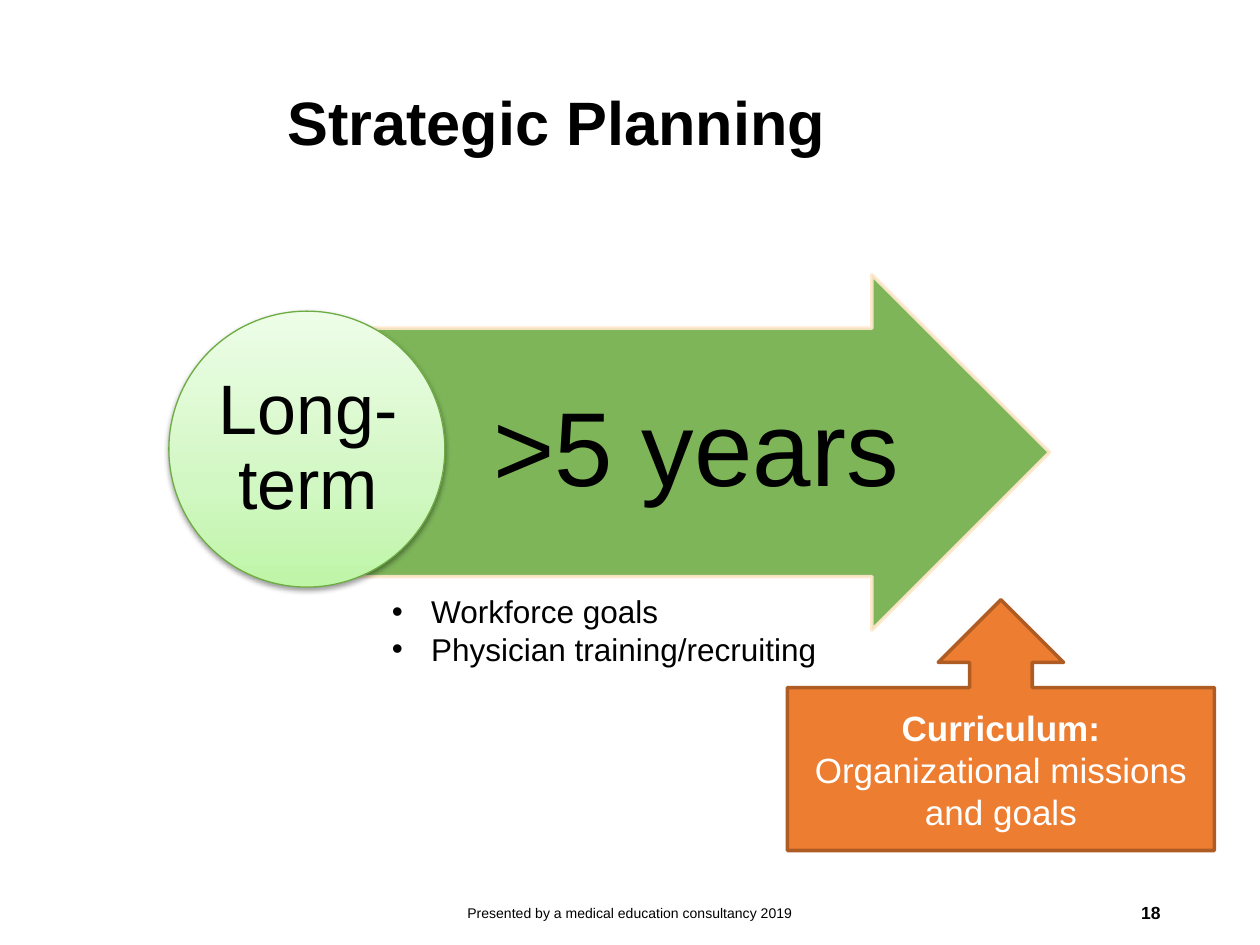
from dataclasses import dataclass

from lxml.etree import SubElement
from pptx import Presentation
from pptx.dml.color import RGBColor
from pptx.enum.shapes import MSO_SHAPE as Shape
from pptx.enum.text import MSO_ANCHOR as Anchor, MSO_AUTO_SIZE as AutoSize, PP_ALIGN as Align
from pptx.oxml import parse_xml
from pptx.oxml.ns import nsdecls, qn
from pptx.util import Pt


@dataclass(frozen=True)
class Theme:
    font: str = "Arial"
    ink: str = "000000"
    white: str = "FFFFFF"
    arrow: str = "70AD47"
    arrow_edge: str = "FFE8CC"
    circle_edge: str = "6DAC43"
    circle_stops: tuple = ((0, "BEF5A7"), (35, "D1F7C2"), (100, "EDFDE7"))
    callout: str = "ED7D31"
    callout_edge: str = "AF5C24"
    title: int = 35
    years: int = 60
    term: int = 40
    callout_text: int = 20
    body: int = 18
    number: int = 10
    footer: int = 8


THEME = Theme()


def color(value):
    return RGBColor.from_string(value)


def place(shape, left, top, width, height):
    shape.left, shape.top = Pt(left), Pt(top)
    shape.width, shape.height = Pt(width), Pt(height)


def write(shape, *lines, size, ink=THEME.ink, bold=(), align=Align.LEFT, anchor=Anchor.MIDDLE,
          spacing=1.0, margins=(7.2, 3.6, 7.2, 3.6), bullet=None, auto_size=AutoSize.NONE):
    frame = shape.text_frame
    frame.word_wrap = True
    frame.auto_size = auto_size
    frame.vertical_anchor = anchor
    frame.margin_left, frame.margin_top, frame.margin_right, frame.margin_bottom = map(Pt, margins)
    for index, line in enumerate(lines):
        paragraph = frame.paragraphs[0] if index == 0 else frame.add_paragraph()
        paragraph.alignment = align
        paragraph.line_spacing = spacing
        paragraph.space_before = paragraph.space_after = Pt(0)
        if bullet:
            add_bullet(paragraph, bullet, ink)
        run = paragraph.add_run()
        run.text = line
        run.font.name = THEME.font
        run.font.size = Pt(size)
        run.font.bold = index in bold
        run.font.color.rgb = color(ink)


def add_bullet(paragraph, character, ink, indent=22.5):
    properties = paragraph._p.get_or_add_pPr()
    properties.set("marL", str(Pt(indent)))
    properties.set("indent", str(-Pt(indent)))
    SubElement(SubElement(properties, qn("a:buClr")), qn("a:srgbClr"), val=ink)
    SubElement(properties, qn("a:buFont"), typeface=THEME.font)
    SubElement(properties, qn("a:buChar"), char=character)


def add_text(shapes, box, *lines, **style):
    text_box = shapes.add_textbox(*map(Pt, box))
    write(text_box, *lines, **style)


def add_shape(shapes, kind, box, fill, edge, edge_width):
    shape = shapes.add_shape(kind, *map(Pt, box))
    shape.shadow.inherit = False
    shape.fill.solid()
    shape.fill.fore_color.rgb = color(fill)
    shape.line.color.rgb = color(edge)
    shape.line.width = Pt(edge_width)
    return shape


def set_opacity(shape, percent):
    for solid in shape._element.spPr.iter(qn("a:solidFill")):
        SubElement(solid[0], qn("a:alpha"), val=str(percent * 1000))


def set_gradient(shape, stops):
    marks = "".join(f'<a:gs pos="{position * 1000}"><a:srgbClr val="{value}"/></a:gs>'
                    for position, value in stops)
    gradient = parse_xml(f'<a:gradFill {nsdecls("a")} rotWithShape="1"><a:gsLst>{marks}</a:gsLst>'
                         '<a:lin ang="16200000" scaled="0"/></a:gradFill>')
    properties = shape._element.spPr
    properties.replace(properties.find(qn("a:solidFill")), gradient)


def set_shadow(shape, blur, distance, opacity):
    effects = shape._element.spPr.find(qn("a:effectLst"))
    shadow = SubElement(effects, qn("a:outerShdw"), blurRad=str(Pt(blur)), dist=str(Pt(distance)),
                        dir="5400000", rotWithShape="0")
    shade = SubElement(shadow, qn("a:srgbClr"), val=THEME.ink)
    SubElement(shade, qn("a:alpha"), val=str(opacity * 1000))


def add_timeline(slide):
    shapes = slide.shapes.add_group_shape().shapes
    centered = dict(align=Align.CENTER, spacing=0.9)

    arrow = add_shape(shapes, Shape.RIGHT_ARROW, (146.2, 157, 453.6, 203),
                      THEME.arrow, THEME.arrow_edge, 2)
    arrow.adjustments[0], arrow.adjustments[1] = 0.7, 0.5
    set_opacity(arrow, 90)
    add_text(shapes, (260, 187.2, 269.3, 142.6), ">5 years", size=THEME.years,
             margins=(12.2, 3, 6, 3), **centered)

    circle = add_shape(shapes, Shape.OVAL, (96.5, 177.8, 157.7, 157.7),
                       THEME.arrow, THEME.circle_edge, 0.75)
    set_gradient(circle, THEME.circle_stops)
    set_shadow(circle, blur=3.1, distance=1.6, opacity=38)
    add_text(shapes, (120.2, 200.9, 111.6, 111.6), "Long-term", size=THEME.term,
             margins=(2, 2, 2, 2), **centered)


def add_callout(slide):
    callout = add_shape(slide.shapes, Shape.UP_ARROW_CALLOUT, (450, 342.7, 244, 143.3),
                        THEME.callout, THEME.callout_edge, 2)
    write(callout, "Curriculum:", "Organizational missions and goals",
          size=THEME.callout_text, ink=THEME.white, bold=(0,), align=Align.CENTER)


def main():
    presentation = Presentation()
    presentation.slide_width, presentation.slide_height = Pt(720), Pt(540)
    slide = presentation.slides.add_slide(presentation.slide_layouts[1])

    title, goals = slide.shapes.title, slide.placeholders[1]
    place(title, 157, 19.5, 514, 104.5)
    write(title, "Strategic Planning", size=THEME.title, bold=(0,), spacing=0.9)

    add_timeline(slide)

    place(goals, 216.7, 334.8, 301, 51)
    write(goals, "Workforce goals", "Physician training/recruiting", size=THEME.body,
          anchor=Anchor.TOP, bullet="•", auto_size=AutoSize.SHAPE_TO_FIT_TEXT)

    add_callout(slide)
    add_text(slide.shapes, (238.3, 507, 243.4, 28.8),
             "Presented by a medical education consultancy 2019",
             size=THEME.footer, align=Align.CENTER)
    add_text(slide.shapes, (508.3, 507, 162, 28.8), "18",
             size=THEME.number, bold=(0,), align=Align.RIGHT)

    presentation.save("out.pptx")


if __name__ == "__main__":
    main()
